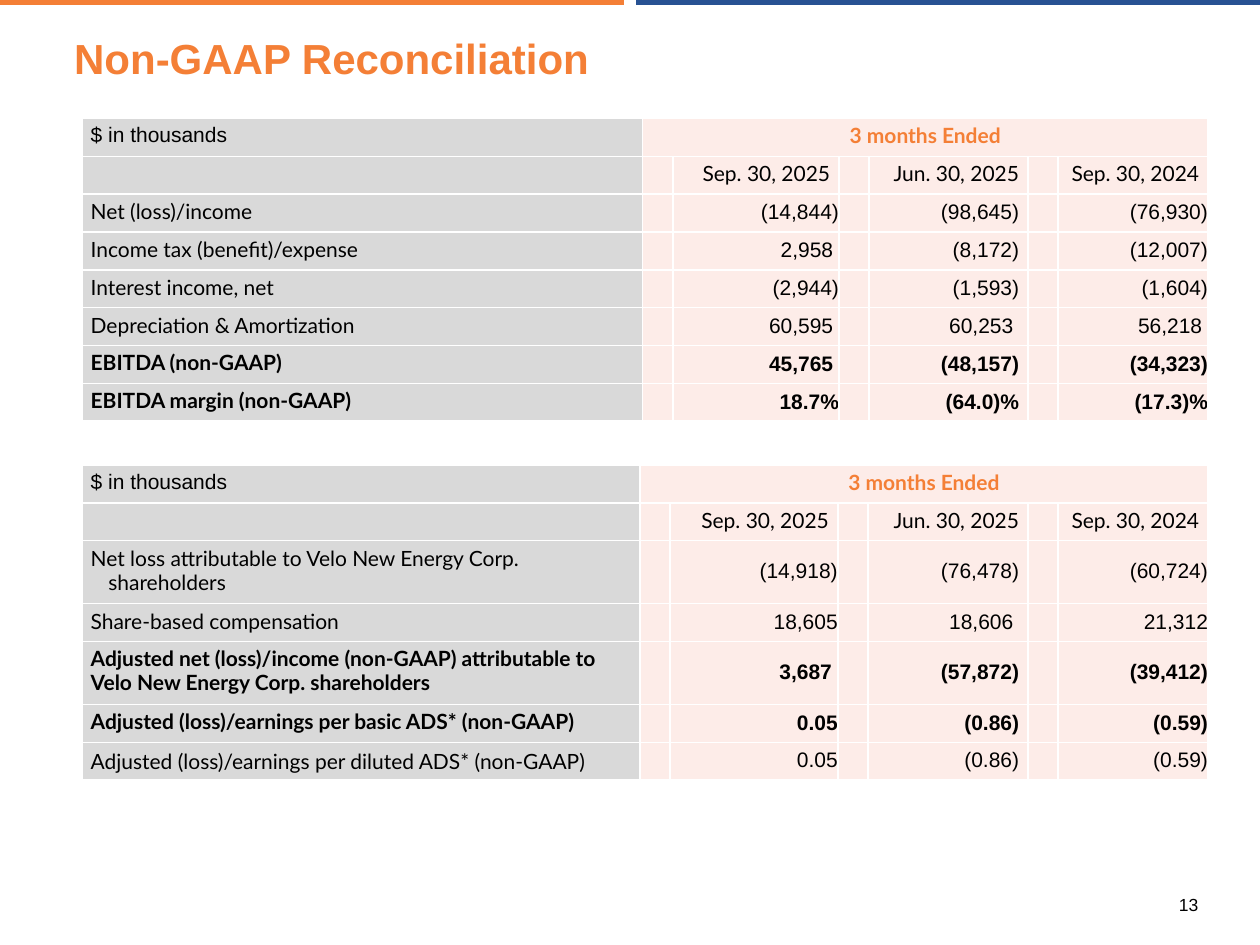
from dataclasses import dataclass

from lxml.etree import SubElement
from pptx import Presentation
from pptx.dml.color import RGBColor
from pptx.enum.shapes import MSO_CONNECTOR as Connector
from pptx.enum.text import MSO_ANCHOR as Anchor, PP_ALIGN as Align
from pptx.oxml.ns import qn
from pptx.util import Inches, Pt

COLORS = {
    "orange": "F47F36",
    "blue": "285293",
    "black": "000000",
    "white": "FFFFFF",
    "gray": "D9D9D9",
    "pink": "FDECE8",
}
PERIODS = ("Sep. 30, 2025", "Jun. 30, 2025", "Sep. 30, 2024")
VALUE_COLS = (2, 4, 6)


@dataclass
class Row:
    label: str
    values: tuple[str, str, str]
    bold: bool = False
    hanging: bool = False
    height: float = 0.3
    anchor: Anchor = Anchor.TOP


@dataclass
class Statement:
    top: float
    widths: tuple[float, ...]
    rows: list[Row]


STATEMENTS = [
    Statement(0.94, (4.45, 0.18, 1.32, 0.18, 1.26, 0.18, 1.19), [
        Row("Net (loss)/income", ("(14,844)", "(98,645)", "(76,930)"), hanging=True),
        Row("Income tax (benefit)/expense", ("2,958 ", "(8,172)", "(12,007)")),
        Row("Interest income, net", ("(2,944)", "(1,593)", "(1,604)")),
        Row("Depreciation & Amortization", ("60,595 ", "60,253 ", "56,218 ")),
        Row("EBITDA (non-GAAP)", ("45,765 ", "(48,157)", "(34,323)"), bold=True),
        Row("EBITDA margin (non-GAAP)", ("18.7%", "(64.0)%", "(17.3)%"),
            bold=True, hanging=True),
    ]),
    Statement(3.69, (4.43, 0.18, 1.33, 0.18, 1.27, 0.18, 1.19), [
        Row("Net loss attributable to Velo New Energy Corp. shareholders",
            ("(14,918)", "(76,478)", "(60,724)"), hanging=True, height=0.5),
        Row("Share-based compensation", ("18,605", "18,606 ", "21,312")),
        Row("Adjusted net (loss)/income (non-GAAP) attributable to "
            "Velo New Energy Corp. shareholders",
            ("3,687 ", "(57,872)", "(39,412)"), bold=True, height=0.5),
        Row("Adjusted (loss)/earnings per basic ADS* (non-GAAP)",
            ("0.05", "(0.86)", "(0.59)"), bold=True),
        Row("Adjusted (loss)/earnings per diluted ADS* (non-GAAP)",
            ("0.05", "(0.86)", "(0.59)"), anchor=Anchor.BOTTOM),
    ]),
]


def rgb(name: str) -> RGBColor:
    return RGBColor.from_string(COLORS[name])


def set_font(p, size: float, name: str, color: str, bold: bool) -> None:
    f = p.font
    f.size, f.name, f.bold = Pt(size), name, bold
    f.color.rgb = rgb(color)


def add_rule(s, x1: float, x2: float, color: str) -> None:
    line = s.shapes.add_connector(
        Connector.STRAIGHT, Inches(x1), Inches(0.02), Inches(x2), Inches(0.02))
    line.line.color.rgb = rgb(color)
    line.line.width = Pt(3)
    SubElement(line._element.spPr, qn("a:effectLst"))


def add_text(s, box: tuple[float, ...], text: str, size: float, color: str,
             bold=False, align=Align.LEFT, anchor=Anchor.TOP, side=0.1) -> None:
    tf = s.shapes.add_textbox(*map(Inches, box)).text_frame
    tf.word_wrap = True
    tf.vertical_anchor = anchor
    tf.margin_left = tf.margin_right = Inches(side)
    p = tf.paragraphs[0]
    p.text, p.alignment = text, align
    set_font(p, size, "Arial", color, bold)


def style_cell(cell, fill: str) -> None:
    """Fill the cell, border it in white and keep empty lines small."""
    tc_pr = cell._tc.get_or_add_tcPr()
    for side in ("a:lnL", "a:lnR", "a:lnT", "a:lnB"):
        ln = SubElement(tc_pr, qn(side), w=str(Pt(1)))
        solid = SubElement(ln, qn("a:solidFill"))
        SubElement(solid, qn("a:srgbClr"), val=COLORS["white"])
    cell.fill.solid()
    cell.fill.fore_color.rgb = rgb(fill)
    SubElement(cell.text_frame.paragraphs[0]._p, qn("a:endParaRPr"), sz="1200")


def write_cell(cell, text: str, font="Lato", color="black", bold=False,
               align=Align.LEFT, anchor=Anchor.TOP, side=0.07, edge=0.05,
               hanging=False) -> None:
    cell.margin_left = cell.margin_right = Inches(side)
    cell.margin_top = cell.margin_bottom = Inches(edge)
    cell.vertical_anchor = anchor
    p = cell.text_frame.paragraphs[0]
    p.text, p.alignment, p.line_spacing = text, align, 0.95
    if hanging:
        p_pr = p._p.get_or_add_pPr()
        p_pr.set("marL", str(Inches(0.14)))
        p_pr.set("indent", str(Inches(-0.14)))
    set_font(p, 12, font, color, bold)


def add_statement(s, st: Statement) -> None:
    heights = [0.3, 0.3] + [row.height for row in st.rows]
    table = s.shapes.add_table(
        len(heights), len(st.widths), Inches(0.65), Inches(st.top),
        Inches(sum(st.widths)), Inches(sum(heights))).table
    table.first_row = table.horz_banding = False
    for col, width in zip(table.columns, st.widths):
        col.width = Inches(width)
    for table_row, height in zip(table.rows, heights):
        table_row.height = Inches(height)
        for c, cell in enumerate(table_row.cells):
            style_cell(cell, "pink" if c else "gray")

    # Heading rows
    table.cell(0, 1).merge(table.cell(0, 6))
    write_cell(table.cell(0, 0), "$ in thousands", font="Arial")
    write_cell(table.cell(0, 1), "3 months Ended", color="orange", bold=True,
               align=Align.CENTER)
    for c, period in zip(VALUE_COLS, PERIODS):
        write_cell(table.cell(1, c), period, align=Align.RIGHT)

    # Line items
    for r, row in enumerate(st.rows, start=2):
        write_cell(table.cell(r, 0), row.label, bold=row.bold,
                   anchor=row.anchor, hanging=row.hanging)
        for c, value in zip(VALUE_COLS, row.values):
            write_cell(table.cell(r, c), value, font="Arial", bold=row.bold,
                       align=Align.RIGHT, anchor=Anchor.MIDDLE,
                       side=0.07 if c == 4 else 0, edge=0)


def main() -> None:
    prs = Presentation()
    prs.slide_width, prs.slide_height = Inches(10), Inches(7.5)
    s = prs.slides.add_slide(prs.slide_layouts[6])

    # Top rules
    add_rule(s, 0, 4.95, "orange")
    add_rule(s, 5.05, 10, "blue")

    # Page number, tables and title
    add_text(s, (7.59, 6.92, 1.92, 0.39), "13", 10, "black",
             align=Align.RIGHT, anchor=Anchor.BOTTOM, side=0)
    for st in STATEMENTS:
        add_statement(s, st)
    add_text(s, (0.49, 0.21, 9.02, 0.38), "Non-GAAP Reconciliation", 24,
             "orange", bold=True)

    prs.save("out.pptx")


if __name__ == "__main__":
    main()
